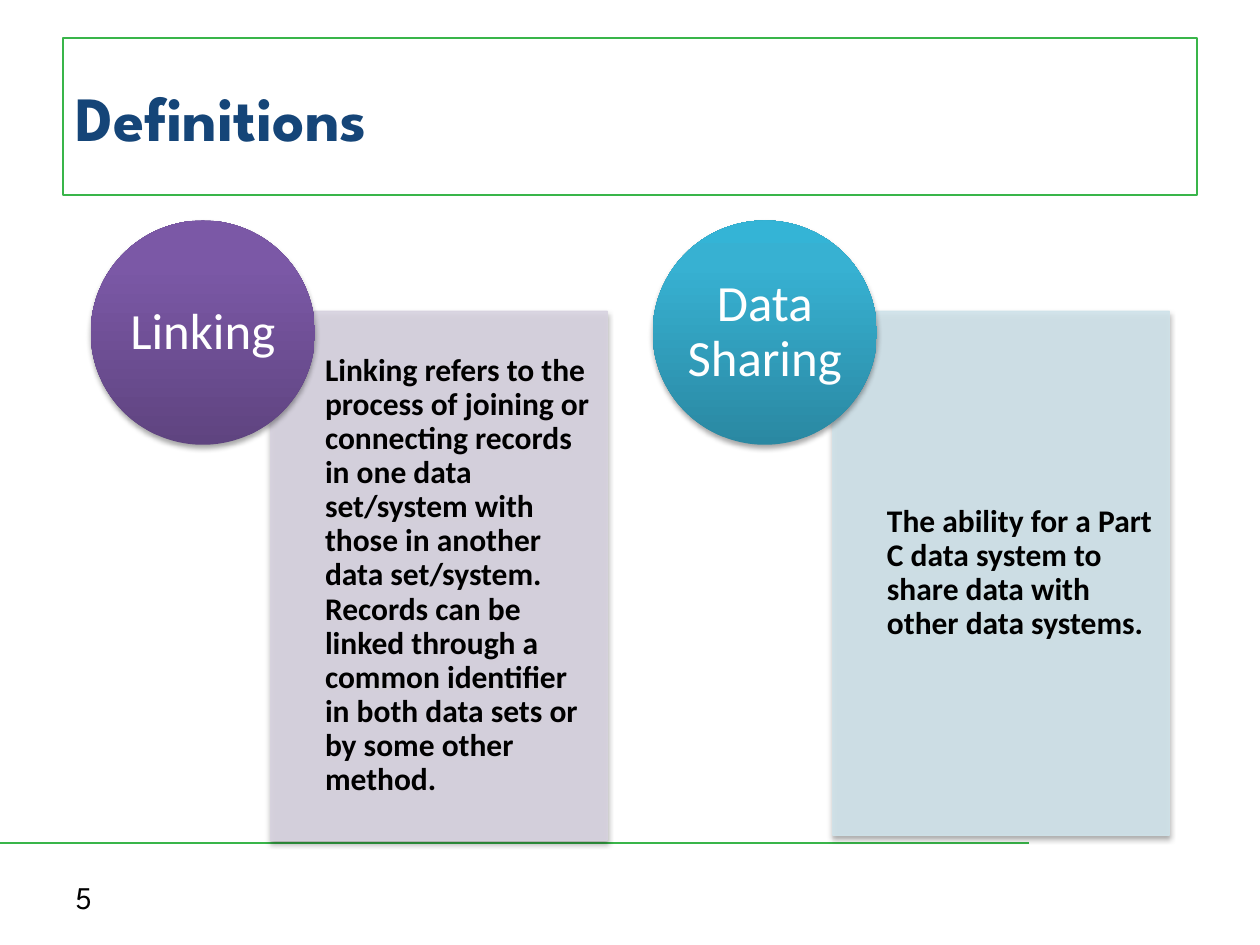
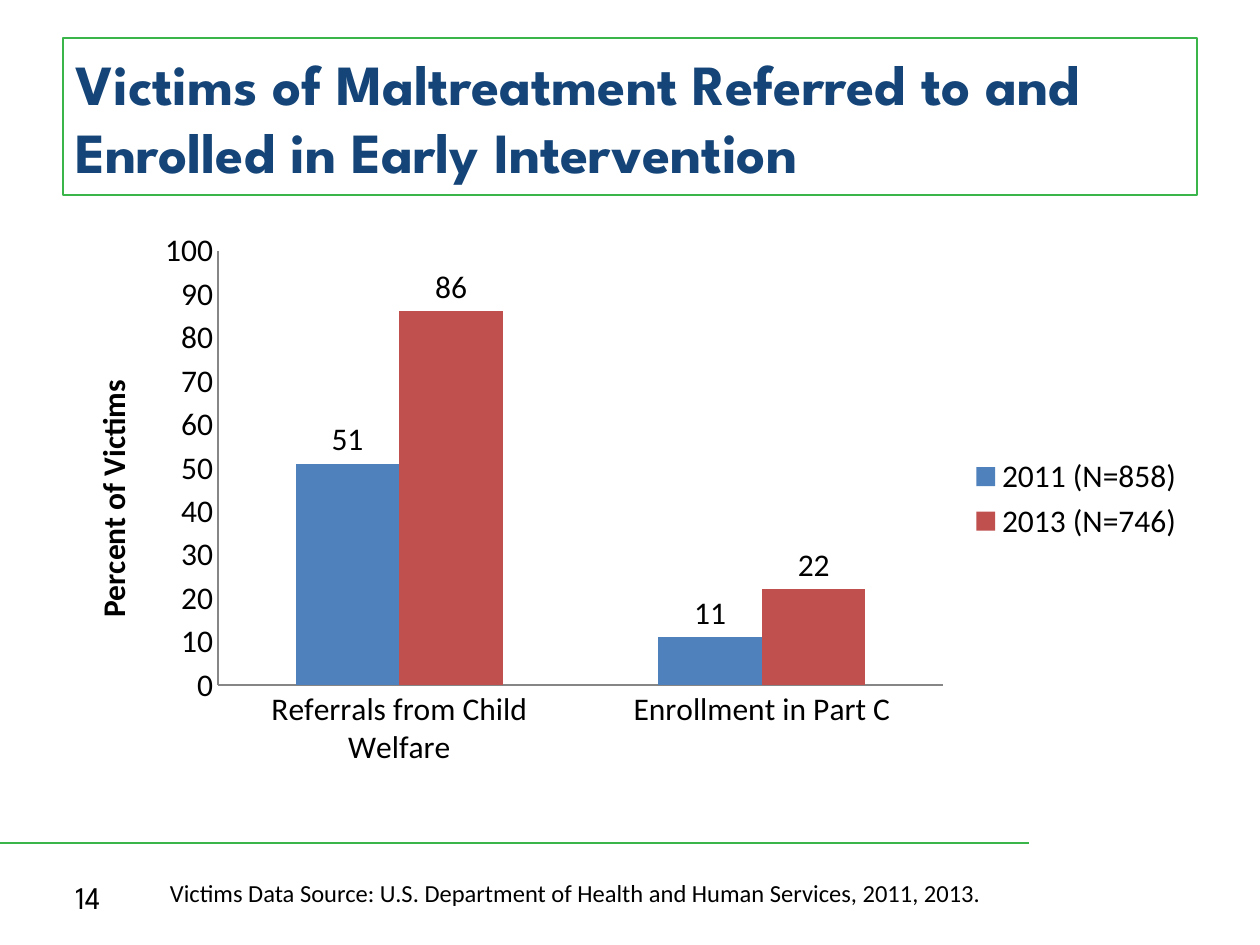
from lxml import etree
from pptx import Presentation
from pptx.chart.data import CategoryChartData
from pptx.dml.color import RGBColor
from pptx.enum.chart import XL_CHART_TYPE, XL_LABEL_POSITION, XL_LEGEND_POSITION, XL_TICK_MARK
from pptx.enum.shapes import MSO_CONNECTOR, MSO_SHAPE
from pptx.enum.text import MSO_ANCHOR, PP_ALIGN
from pptx.oxml.ns import qn
from pptx.util import Inches, Pt

RECTANGLE, OVAL = MSO_SHAPE.RECTANGLE, MSO_SHAPE.OVAL
STRAIGHT = MSO_CONNECTOR.STRAIGHT
LEFT, CENTER = PP_ALIGN.LEFT, PP_ALIGN.CENTER
MIDDLE, TOP = MSO_ANCHOR.MIDDLE, MSO_ANCHOR.TOP
CLUSTERED = XL_CHART_TYPE.COLUMN_CLUSTERED
OUTSIDE_END = XL_LABEL_POSITION.OUTSIDE_END
LEGEND_RIGHT = XL_LEGEND_POSITION.RIGHT
NO_TICKS = XL_TICK_MARK.NONE

GREEN = RGBColor(0x39, 0xB5, 0x4A)
NAVY = RGBColor(0x15, 0x45, 0x78)
BLACK = RGBColor(0x00, 0x00, 0x00)
WHITE = RGBColor(0xFF, 0xFF, 0xFF)
AXIS_GRAY = RGBColor(0x86, 0x86, 0x86)
BLUE = RGBColor(0x4F, 0x81, 0xBD)
RED = RGBColor(0xC0, 0x50, 0x4D)
LILAC = RGBColor(0xD8, 0xD3, 0xE0)
PALE_BLUE = RGBColor(0xD0, 0xE3, 0xEA)
PURPLES = (RGBColor(0x5F, 0x44, 0x80), RGBColor(0x7B, 0x58, 0xA6), RGBColor(0x7C, 0x57, 0xA8))
TEALS = (RGBColor(0x2A, 0x88, 0xA2), RGBColor(0x37, 0xB1, 0xD2), RGBColor(0x34, 0xB4, 0xD6))
GRADIENT_POSITIONS = (0, 80, 100)

HEADING_FONT, BODY_FONT = "League Spartan", "Calibri"
TITLE_FORMAT = {"name": HEADING_FONT, "bold": True}
NUMBER_FORMAT = {"name": HEADING_FONT, "size": Pt(18)}
DEFINITION_FORMAT = {"name": BODY_FONT, "size": Pt(18), "bold": True}
TERM_FORMAT = {"name": BODY_FONT, "size": Pt(29)}
SOURCE_FORMAT = {"name": BODY_FONT, "size": Pt(14)}
CHART_FORMAT = {"name": BODY_FONT, "size": Pt(18)}


def write_text(shape, text, font_format, color, anchor=MIDDLE, align=LEFT,
               margins=(0.1, 0.05, 0.1, 0.05), line_spacing=None):
    """Fill the shape with one paragraph; margins run left, top, right, bottom."""
    frame = shape.text_frame
    frame.word_wrap = True
    frame.vertical_anchor = anchor
    for side, margin in zip(("left", "top", "right", "bottom"), margins):
        setattr(frame, f"margin_{side}", Inches(margin))
    paragraph = frame.paragraphs[0]
    paragraph.alignment = align
    paragraph.line_spacing = line_spacing
    run = paragraph.add_run()
    run.text = text
    for name, value in font_format.items():
        setattr(run.font, name, value)
    run.font.color.rgb = color


def add_soft_shadow(shape):
    shape.shadow.inherit = False
    effects = shape._element.spPr.find(qn("a:effectLst"))
    shadow = etree.SubElement(effects, qn("a:outerShdw"), blurRad=str(Pt(3.1)),
                              dist=str(Pt(1.8)), dir="5400000", rotWithShape="0")
    color = etree.SubElement(shadow, qn("a:srgbClr"), val=str(BLACK))
    etree.SubElement(color, qn("a:alpha"), val="35000")


presentation = Presentation()
presentation.slide_width, presentation.slide_height = Inches(10), Inches(7.5)

# Frame shared by both slides
slides = []
for title, title_size, number in (
    ("Definitions", 36, "5"),
    ("Victims of Maltreatment Referred to and Enrolled in Early Intervention", 32.4, "14"),
):
    slide = presentation.slides.add_slide(presentation.slide_layouts[6])
    slides.append(slide)

    footer_line = slide.shapes.add_connector(STRAIGHT, 0, Inches(6.69), Inches(8.17), Inches(6.69))
    footer_line.line.color.rgb = GREEN
    footer_line.line.width = Pt(1.5)
    etree.SubElement(footer_line._element.spPr, qn("a:effectLst"))

    number_box = slide.shapes.add_textbox(Inches(0.5), Inches(6.92), Inches(2.33), Inches(0.4))
    write_text(number_box, number, NUMBER_FORMAT, BLACK)

    title_box = slide.shapes.add_shape(RECTANGLE, Inches(0.5), Inches(0.3), Inches(9), Inches(1.25))
    title_box.shadow.inherit = False
    title_box.fill.background()
    title_box.line.color.rgb = GREEN
    title_box.line.width = Pt(1)
    write_text(title_box, title, {**TITLE_FORMAT, "size": Pt(title_size)}, NAVY)

definitions_slide, victims_slide = slides

# Definitions: a circle with the term over a panel with its meaning
definitions = (
    ("Linking",
     "Linking refers to the process of joining or connecting records in one data set/system "
     "with those in another data set/system. Records can be linked through a common "
     "identifier in both data sets or by some other method.",
     4.2, LILAC, PURPLES),
    ("Data Sharing",
     "The ability for a Part C data system to share data with other data systems.",
     4.16, PALE_BLUE, TEALS),
)
for index, (term, meaning, panel_height, panel_color, circle_colors) in enumerate(definitions):
    left = 0.72 + index * 4.46
    panel = definitions_slide.shapes.add_shape(
        RECTANGLE, Inches(left + 1.43), Inches(2.47), Inches(2.67), Inches(panel_height))
    panel.fill.solid()
    panel.fill.fore_color.rgb = panel_color
    panel.line.color.rgb = panel_color
    panel.line.width = Pt(0.75)
    for color in panel._element.spPr.iter(qn("a:srgbClr")):
        etree.SubElement(color, qn("a:alpha"), val="90000")
    add_soft_shadow(panel)
    write_text(panel, meaning, DEFINITION_FORMAT, BLACK,
               margins=(0.43, 0.14, 0.13, 0.14), line_spacing=0.9)

    circle = definitions_slide.shapes.add_shape(
        OVAL, Inches(left), Inches(1.75), Inches(1.78), Inches(1.78))
    circle.fill.gradient()
    circle.fill.gradient_angle = 90
    stops = circle._element.spPr.find(f".//{qn('a:gsLst')}")
    for stop in list(stops):
        stops.remove(stop)
    for position, color in zip(GRADIENT_POSITIONS, circle_colors):
        stop = etree.SubElement(stops, qn("a:gs"), pos=str(position * 1000))
        etree.SubElement(stop, qn("a:srgbClr"), val=str(color))
    circle.line.fill.background()
    add_soft_shadow(circle)
    write_text(circle, term, TERM_FORMAT, WHITE, align=CENTER,
               margins=(0, 0, 0, 0), line_spacing=0.9)

# Victims referred and enrolled
chart_data = CategoryChartData()
chart_data.categories = ["Referrals from Child Welfare", "Enrollment in Part C"]
chart_data.add_series("2011 (N=858)", (51, 11))
chart_data.add_series("2013 (N=746)", (86, 22))
chart = victims_slide.shapes.add_chart(
    CLUSTERED, Inches(0.5), Inches(1.75), Inches(9), Inches(4.42), chart_data).chart
for name, value in CHART_FORMAT.items():
    setattr(chart.font, name, value)
chart.font.color.rgb = BLACK
chart.has_title = False
chart.has_legend = True
chart.legend.position = LEGEND_RIGHT
chart.legend.include_in_layout = False

for axis in (chart.category_axis, chart.value_axis):
    axis.has_major_gridlines = False
    axis.major_tick_mark = NO_TICKS
    axis.minor_tick_mark = NO_TICKS
    axis.format.line.color.rgb = AXIS_GRAY
    axis.format.line.width = Pt(0.75)
value_axis = chart.value_axis
value_axis.minimum_scale, value_axis.maximum_scale, value_axis.major_unit = 0, 100, 10
axis_title = value_axis.axis_title.text_frame
axis_title.text = "Percent of Victims"
axis_title_font = axis_title.paragraphs[0].runs[0].font
for name, value in {**CHART_FORMAT, "bold": True}.items():
    setattr(axis_title_font, name, value)
axis_title_font.color.rgb = BLACK

plot = chart.plots[0]
plot.gap_width = 150
plot.overlap = 0
plot.vary_by_categories = False
for series, color in zip(plot.series, (BLUE, RED)):
    series.format.fill.solid()
    series.format.fill.fore_color.rgb = color
    series.invert_if_negative = False
    series.data_labels.show_value = True
    series.data_labels.position = OUTSIDE_END

source_box = victims_slide.shapes.add_textbox(Inches(1.25), Inches(6.92), Inches(6.67), Inches(0.34))
write_text(source_box,
           "Victims Data Source: U.S. Department of Health and Human Services, 2011, 2013.",
           SOURCE_FORMAT, BLACK, anchor=TOP)

presentation.save("out.pptx")
